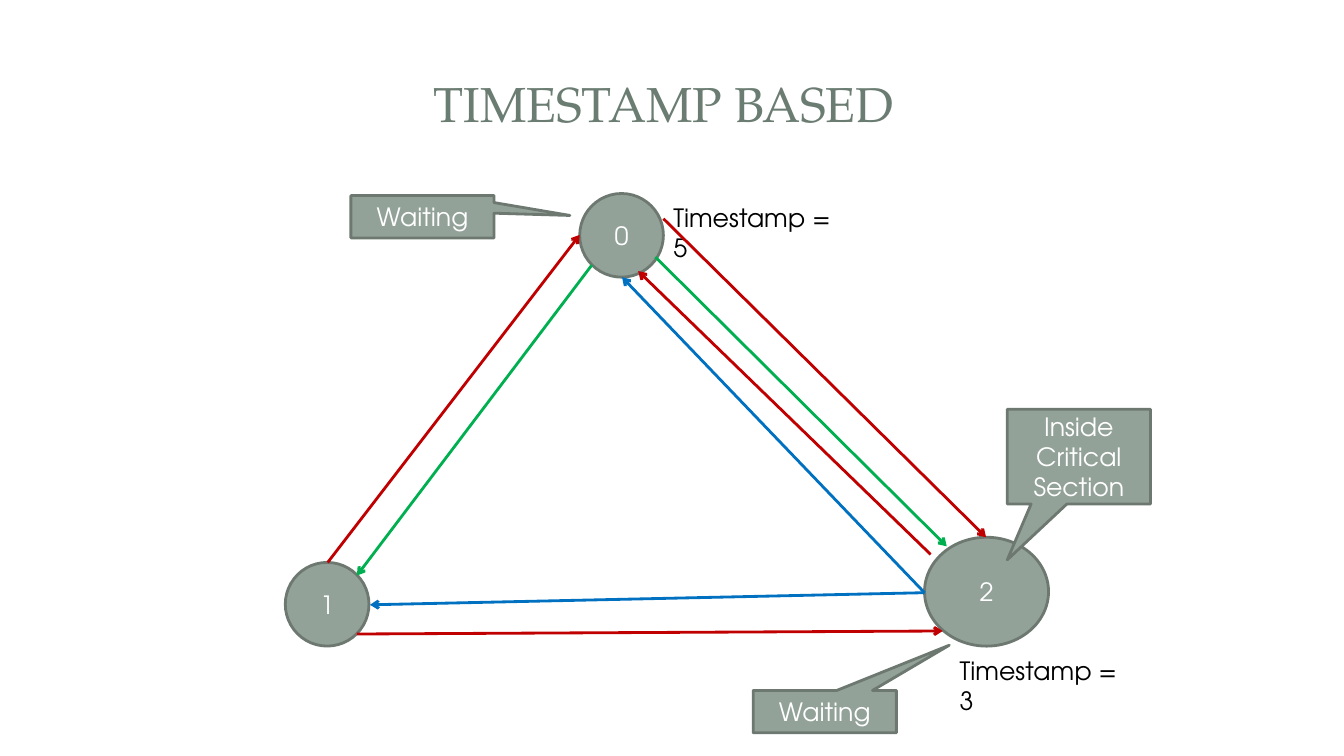
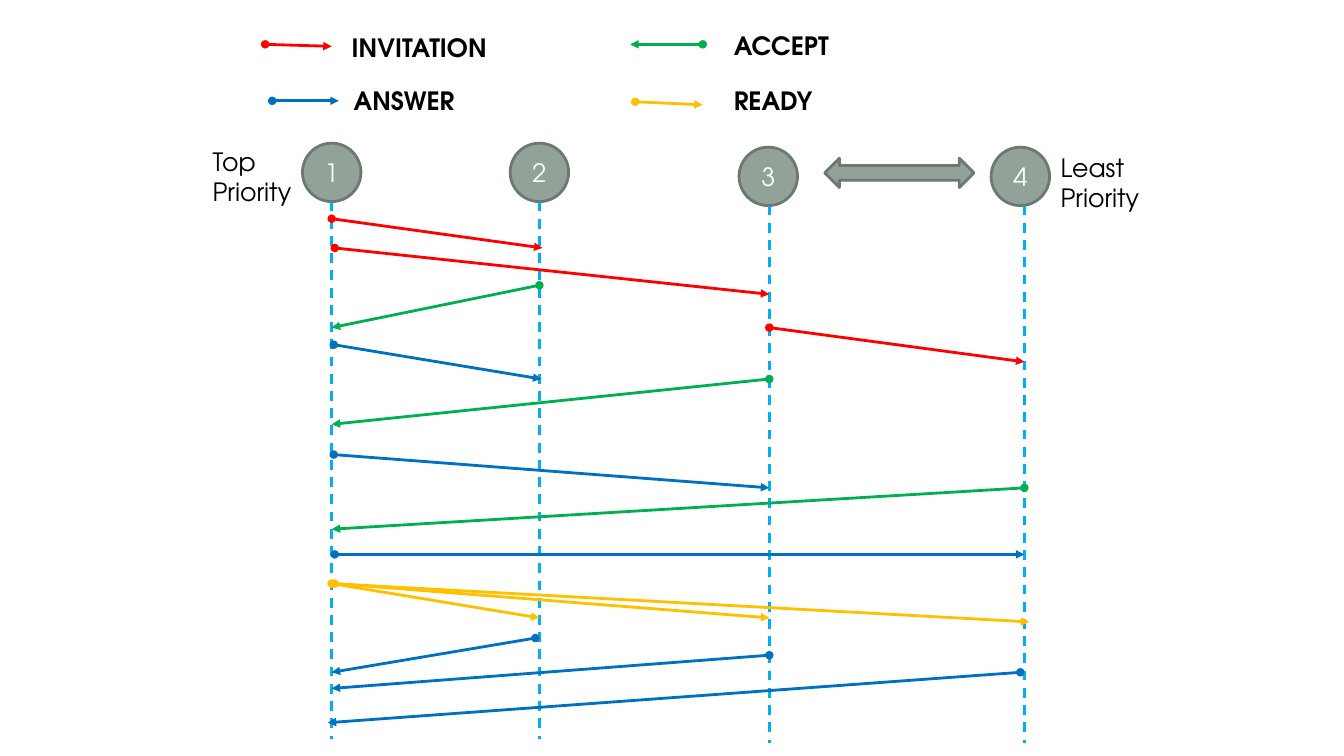
from dataclasses import dataclass
from enum import Enum

import lxml.etree
import pptx
import pptx.dml.color
import pptx.enum.dml
import pptx.enum.shapes
import pptx.enum.text
import pptx.oxml.ns
import pptx.presentation
import pptx.shapes.autoshape
import pptx.shapes.connector
import pptx.slide
import pptx.text.text
import pptx.util

Inches = pptx.util.Inches
Pt = pptx.util.Pt
ShapeType = pptx.enum.shapes.MSO_SHAPE
Align = pptx.enum.text.PP_ALIGN
Anchor = pptx.enum.text.MSO_ANCHOR


@dataclass(frozen=True)
class Theme:
    title_font: str = "TeX Gyre Pagella"
    body_font: str = "TeX Gyre Adventor"
    title_size: float = 35
    body_size: float = 18
    title: str = "6B7D72"
    text: str = "000000"
    light_text: str = "FFFFFF"
    node: str = "93A299"
    node_edge: str = "6D7871"
    lifeline: str = "00B0F0"
    green: str = "00B050"
    blue: str = "0070C0"
    dark_red: str = "C00000"
    line_width: float = 2
    lifeline_width: float = 1.75


THEME = Theme()


class Kind(Enum):
    """Message kinds, each with its colour."""

    INVITATION = "FF0000"
    ACCEPT = THEME.green
    ANSWER = THEME.blue
    READY = "FFC000"


@dataclass(frozen=True)
class Box:
    left: float
    top: float
    width: float
    height: float


@dataclass(frozen=True)
class Arrow:
    color: str
    start: tuple[float, float]
    end: tuple[float, float]


@dataclass(frozen=True)
class Callout:
    text: str
    box: Box
    pointer: tuple[float, float]


@dataclass(frozen=True)
class Process:
    x: float
    node_left: float
    node_top: float


@dataclass(frozen=True)
class Message:
    kind: Kind
    sender: int
    start_y: float
    receiver: int
    end_y: float
    start_shift: float = 0
    end_shift: float = 0


@dataclass(frozen=True)
class LegendEntry:
    kind: Kind
    start: tuple[float, float]
    end: tuple[float, float]
    label_left: float
    label_top: float


NODES = {
    "2": Box(9.17, 5.33, 1.23, 1.08),
    "0": Box(5.75, 1.92, 0.83, 0.83),
    "1": Box(2.83, 5.58, 0.83, 0.83),
}
ARROWS = (
    Arrow(THEME.green, (5.87, 2.63), (3.54, 5.71)),
    Arrow(THEME.green, (6.5, 2.55), (9.39, 5.42)),
    Arrow(THEME.blue, (9.17, 5.88), (6.17, 2.75)),
    Arrow(THEME.blue, (9.17, 5.88), (3.67, 6)),
    Arrow(THEME.dark_red, (3.54, 6.29), (9.35, 6.26)),
    Arrow(THEME.dark_red, (3.25, 5.58), (5.75, 2.33)),
    Arrow(THEME.dark_red, (6.58, 2.17), (9.78, 5.33)),
    Arrow(THEME.dark_red, (9.23, 5.5), (6.33, 2.69)),
)
TIMESTAMPS = {
    "Timestamp = 5": Box(6.58, 1.96, 1.9, 0.4),
    "Timestamp = 3": Box(9.42, 6.45, 1.9, 0.4),
}
CALLOUTS = (
    Callout("Waiting", Box(3.48, 1.94, 1.42, 0.42), (1.03, -0.03)),
    Callout("Waiting", Box(7.47, 6.85, 1.42, 0.42), (0.87, -1.57)),
    Callout("Inside Critical Section", Box(9.99, 4.06, 1.42, 0.94), (-0.5, 1.09)),
)

NODE_SIZE = 0.58
LIFELINE_LENGTH = 5.33
PROCESSES = {
    1: Process(3.29, 3, 1.42),
    2: Process(5.35, 5.06, 1.42),
    3: Process(7.63, 7.33, 1.46),
    4: Process(10.16, 9.83, 1.46),
}
PRIORITIES = {
    ("Top", "Priority"): Box(2.01, 1.4, 1.05, 0.71),
    ("Least", "Priority"): Box(10.42, 1.46, 1.05, 0.71),
}
LEGEND = (
    LegendEntry(Kind.READY, (6.3, 1.01), (6.97, 1.04), 7.18, 0.8),
    LegendEntry(Kind.ANSWER, (2.7, 1), (3.36, 1), 3.41, 0.8),
    LegendEntry(Kind.ACCEPT, (6.97, 0.44), (6.25, 0.44), 7.18, 0.25),
    LegendEntry(Kind.INVITATION, (2.63, 0.44), (3.29, 0.46), 3.39, 0.27),
)
MESSAGES = (
    Message(Kind.INVITATION, 1, 2.17, 2, 2.46, end_shift=0.03),
    Message(Kind.ACCEPT, 2, 2.83, 1, 3.25),
    Message(Kind.ANSWER, 1, 3.42, 2, 3.76, 0.02, 0.02),
    Message(Kind.READY, 1, 5.79, 2, 6.13),
    Message(Kind.INVITATION, 1, 2.46, 3, 2.92, 0.03),
    Message(Kind.INVITATION, 3, 3.25, 4, 3.59),
    Message(Kind.ACCEPT, 3, 3.76, 1, 4.21),
    Message(Kind.ANSWER, 1, 4.51, 3, 4.84, 0.02),
    Message(Kind.ACCEPT, 4, 4.84, 1, 5.25),
    Message(Kind.ANSWER, 1, 5.5, 4, 5.5, 0.03),
    Message(Kind.READY, 1, 5.79, 3, 6.13, 0.03),
    Message(Kind.READY, 1, 5.79, 4, 6.17, end_shift=0.05),
    Message(Kind.ANSWER, 2, 6.33, 1, 6.67, -0.04),
    Message(Kind.ANSWER, 3, 6.5, 1, 6.83),
    Message(Kind.ANSWER, 4, 6.67, 1, 7.17, -0.04, -0.04),
)


def rgb(color: str) -> pptx.dml.color.RGBColor:
    return pptx.dml.color.RGBColor.from_string(color)


def inches(box: Box) -> tuple[int, int, int, int]:
    return Inches(box.left), Inches(box.top), Inches(box.width), Inches(box.height)


def add_run(
    paragraph: pptx.text.text._Paragraph,
    text: str,
    color: str,
    font: str = THEME.body_font,
    size: float = THEME.body_size,
    bold: bool = False,
) -> None:
    run = paragraph.add_run()
    run.text = text
    run.font.name = font
    run.font.size = Pt(size)
    run.font.bold = bold
    run.font.color.rgb = rgb(color)


def add_title(slide: pptx.slide.Slide, text: str) -> None:
    title = slide.shapes.title
    title.left, title.top, title.width, title.height = inches(Box(0.62, 0.45, 12.05, 1.14))
    frame = title.text_frame
    frame.auto_size = pptx.enum.text.MSO_AUTO_SIZE.NONE
    frame.vertical_anchor = Anchor.MIDDLE
    paragraph = frame.paragraphs[0]
    paragraph.alignment = Align.CENTER
    add_run(paragraph, text, THEME.title, THEME.title_font, THEME.title_size)


def add_label(slide: pptx.slide.Slide, lines: tuple[str, ...], box: Box, bold: bool = False) -> None:
    frame = slide.shapes.add_textbox(*inches(box)).text_frame
    frame.word_wrap = True
    for index, line in enumerate(lines):
        paragraph = frame.add_paragraph() if index else frame.paragraphs[0]
        add_run(paragraph, line, THEME.text, bold=bold)


def add_figure(
    slide: pptx.slide.Slide, shape_type: ShapeType, box: Box, text: str = ""
) -> pptx.shapes.autoshape.Shape:
    """Add a preset shape in the grey-green node style."""
    shape = slide.shapes.add_shape(shape_type, *inches(box))
    shape.shadow.inherit = False
    shape.fill.solid()
    shape.fill.fore_color.rgb = rgb(THEME.node)
    shape.line.color.rgb = rgb(THEME.node_edge)
    shape.line.width = Pt(THEME.line_width)
    if text:
        shape.text_frame.word_wrap = True
        shape.text_frame.vertical_anchor = Anchor.MIDDLE
        paragraph = shape.text_frame.paragraphs[0]
        paragraph.alignment = Align.CENTER
        add_run(paragraph, text, THEME.light_text)
    return shape


def add_line(
    slide: pptx.slide.Slide, arrow: Arrow, width: float = THEME.line_width
) -> pptx.shapes.connector.Connector:
    points = [Inches(value) for value in (*arrow.start, *arrow.end)]
    connector = slide.shapes.add_connector(pptx.enum.shapes.MSO_CONNECTOR.STRAIGHT, *points)
    connector.line.color.rgb = rgb(arrow.color)
    connector.line.width = Pt(width)
    lxml.etree.SubElement(connector.element.spPr, pptx.oxml.ns.qn("a:effectLst"))
    return connector


def add_arrow(slide: pptx.slide.Slide, arrow: Arrow, **ends: str) -> None:
    """Draw an arrow; ends gives headEnd (at the start) before tailEnd."""
    properties = add_line(slide, arrow).element.spPr
    outline = properties.find(pptx.oxml.ns.qn("a:ln"))
    for name, end_type in ends.items():
        lxml.etree.SubElement(outline, pptx.oxml.ns.qn(f"a:{name}"), type=end_type)


def build_timestamp_slide(presentation: pptx.presentation.Presentation) -> None:
    slide = presentation.slides.add_slide(presentation.slide_layouts.get_by_name("Title Only"))
    add_title(slide, "TIMESTAMP BASED ")
    for name, box in NODES.items():
        add_figure(slide, ShapeType.OVAL, box, name)
    for text, box in TIMESTAMPS.items():
        add_label(slide, (text,), box)
    for arrow in ARROWS:
        add_arrow(slide, arrow, tailEnd="arrow")
    for callout in CALLOUTS:
        shape = add_figure(slide, ShapeType.RECTANGULAR_CALLOUT, callout.box, callout.text)
        shape.adjustments[0], shape.adjustments[1] = callout.pointer


def build_message_slide(presentation: pptx.presentation.Presentation) -> None:
    slide = presentation.slides.add_slide(presentation.slide_layouts.get_by_name("Blank"))
    for number, process in PROCESSES.items():
        node = Box(process.node_left, process.node_top, NODE_SIZE, NODE_SIZE)
        add_figure(slide, ShapeType.OVAL, node, str(number))
        top = process.node_top + NODE_SIZE
        span = Arrow(THEME.lifeline, (process.x, top), (process.x, top + LIFELINE_LENGTH))
        lifeline = add_line(slide, span, THEME.lifeline_width)
        lifeline.line.dash_style = pptx.enum.dml.MSO_LINE.DASH
    for lines, box in PRIORITIES.items():
        add_label(slide, lines, box)

    arrows = [Arrow(entry.kind.value, entry.start, entry.end) for entry in LEGEND]
    for message in MESSAGES:
        start = (PROCESSES[message.sender].x + message.start_shift, message.start_y)
        end = (PROCESSES[message.receiver].x + message.end_shift, message.end_y)
        arrows.append(Arrow(message.kind.value, start, end))
    for arrow in arrows:
        add_arrow(slide, arrow, headEnd="oval", tailEnd="triangle")
    for entry in LEGEND:
        add_label(slide, (entry.kind.name,), Box(entry.label_left, entry.label_top, 1.7, 0.4), bold=True)
    add_figure(slide, ShapeType.LEFT_RIGHT_ARROW, Box(8.18, 1.57, 1.48, 0.29))


def main() -> None:
    presentation = pptx.Presentation()
    presentation.slide_width = Inches(13.33)
    presentation.slide_height = Inches(7.5)
    build_timestamp_slide(presentation)
    build_message_slide(presentation)
    presentation.save("out.pptx")


if __name__ == "__main__":
    main()
